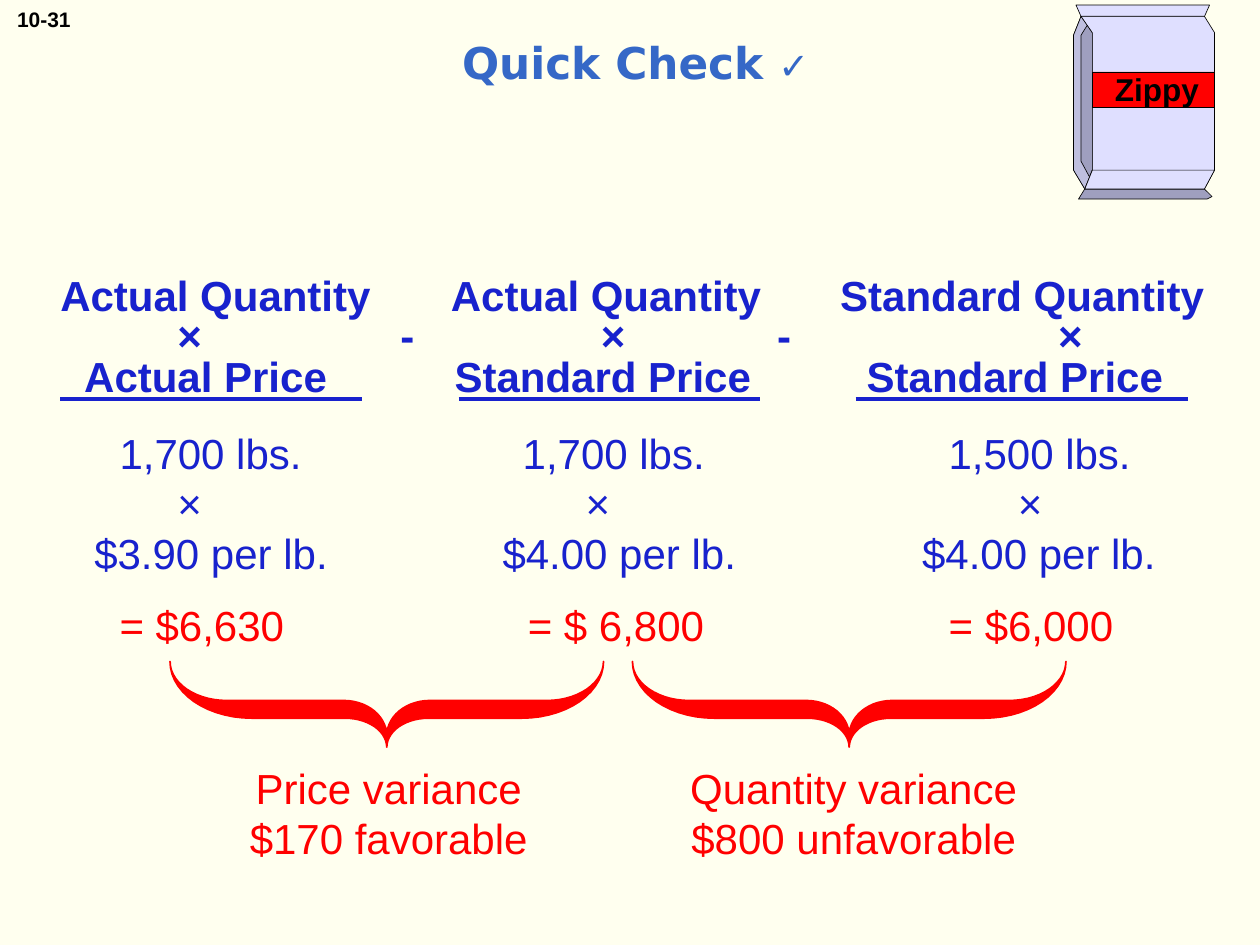
import math

from lxml import etree
from pptx import Presentation, util as u
from pptx.dml.color import RGBColor
from pptx.enum import shapes, text
from pptx.oxml.ns import qn

Inches, Pt = u.Inches, u.Pt
CREAM = RGBColor(0xFF, 0xFF, 0xEF)
BLUE = RGBColor(0x18, 0x22, 0xCD)
TITLE_BLUE = RGBColor(0x35, 0x68, 0xC7)
RED = RGBColor(0xFF, 0x00, 0x00)
BLACK = RGBColor(0x00, 0x00, 0x00)
BAG_LIGHT = RGBColor(0xDF, 0xDF, 0xFF)
BAG_MID = RGBColor(0xBF, 0xBF, 0xDF)
BAG_DARK = RGBColor(0x9F, 0x9F, 0xBF)
LEFT, CENTER, RIGHT = text.PP_ALIGN.LEFT, text.PP_ALIGN.CENTER, text.PP_ALIGN.RIGHT


def text_box(parent, box, wrap=True, anchor=text.MSO_ANCHOR.TOP):
    tf = parent.add_textbox(*map(Inches, box)).text_frame
    tf.word_wrap = wrap
    tf.vertical_anchor = anchor
    return tf


def write(p, content, size=24, color=BLUE, bold=False, font="Arial",
          align=LEFT, before=0, spacing=None):
    """Add a formatted run to a paragraph, and set the paragraph's layout."""
    p.alignment, p.space_before, p.line_spacing = align, Pt(before), spacing
    r = p.add_run()
    r.text = content
    r.font.size, r.font.bold, r.font.name = Pt(size), bold, font
    r.font.color.rgb = color


def write_columns(p, cells, **fmt):
    """Write (position, text) cells at left tab stops, in inches from the text edge."""
    write(p, "".join("\t" + label for _, label in cells), **fmt)
    tabs = etree.SubElement(p._p.get_or_add_pPr(), qn("a:tabLst"))
    for x, _ in cells:
        etree.SubElement(tabs, qn("a:tab"), pos=str(Inches(x)), algn="l")


def paint(sp, fill, line, width):
    sp.shadow.inherit = False
    sp.fill.solid()
    sp.fill.fore_color.rgb = fill
    sp.line.color.rgb = line
    sp.line.width = Pt(width)


def polygon(parent, x, y, points, fill, line=BLACK, width=0.38):
    pts = [(Inches(x + dx), Inches(y + dy)) for dx, dy in points]
    fb = parent.build_freeform(*pts[0])
    fb.add_line_segments(pts[1:], close=True)
    paint(fb.convert_to_shape(), fill, line, width)


def rule(s, x1, x2, y):
    ln = s.shapes.add_connector(shapes.MSO_CONNECTOR.STRAIGHT,
                                Inches(x1), Inches(y), Inches(x2), Inches(y))
    ln.line.color.rgb = BLUE
    ln.line.width = Pt(2.25)
    etree.SubElement(ln._element.spPr, qn("a:effectLst"))


def brace_edge(end_w, depth, bend_x, half, tip):
    """Left half of one brace edge: a quarter ellipse, a flat part, a quarter ellipse."""
    angles = [math.pi / 2 * i / 14 for i in range(15)]
    arm = [(end_w * (1 - math.cos(a)), depth * math.sin(a)) for a in angles]
    bend = [(bend_x + (half - bend_x) * math.sin(a),
             depth + (tip - depth) * (1 - math.cos(a))) for a in angles]
    return arm + bend


def brace(parent, x, y, half=1.72):
    upper = brace_edge(0.45, 0.31, 1.38, half, 0.59)
    lower = brace_edge(0.65, 0.45, 1.39, half, 0.68)

    def mirror(edge):
        return [(2 * half - dx, dy) for dx, dy in edge]

    outline = upper + mirror(upper)[::-1] + mirror(lower) + lower[::-1]
    polygon(parent, x, y, outline, RED, RED, 1)


def variance(s, brace_x, label_x, y, lines):
    g = s.shapes.add_group_shape().shapes
    brace(g, brace_x, y)
    tf = text_box(g, (label_x, y + 0.75, 4.25, 0.9))
    for i, line in enumerate(lines):
        p = tf.add_paragraph() if i else tf.paragraphs[0]
        write(p, line, color=RED, align=CENTER, spacing=Pt(28.8))


def column_table(s, box, rows, spacing):
    """Rows of (cells, format) in one text box."""
    tf = text_box(s.shapes, box)
    for i, (cells, fmt) in enumerate(rows):
        p = tf.add_paragraph() if i else tf.paragraphs[0]
        write_columns(p, cells, spacing=Pt(spacing), **fmt)


def formula_headings(s, x, y):
    bold = {"bold": True}
    column_table(s, (x, y, 9.58, 1.08), [
        ([(0.17, "Actual Quantity"), (3.27, "Actual Quantity"),
          (6.36, "Standard Quantity")], bold),
        ([(1.1, "×"), (2.87, "-"), (4.46, "×"), (5.86, "-"), (8.09, "×")], bold),
        ([(0.36, "Actual Price"), (3.3, "Standard Price"),
          (6.57, "Standard Price")], bold),
    ], 23.04)
    for x1, x2 in ((0.27, 2.66), (3.43, 5.82), (6.58, 9.22)):
        rule(s, x + x1, x + x2, y + 1)


def calculations(s, x, y):
    column_table(s, (x, y, 9.41, 1.89), [
        ([(0.56, "1,700 lbs."), (3.76, "1,700 lbs."), (7.14, "1,500 lbs.")], {}),
        ([(1.02, "×"), (4.26, "×"), (7.69, "×")], {}),
        ([(0.36, "$3.90 per lb."), (3.6, "$4.00 per lb."),
          (6.93, "$4.00 per lb.")], {}),
        ([(0.56, "= $6,630"), (3.8, "= $ 6,800"), (7.14, "= $6,000")],
         {"color": RED, "before": 12}),
    ], 28.8)


def bag(s, x, y):
    g = s.shapes.add_group_shape().shapes
    polygon(g, x, y, [(0.06, 0.09), (0, 0.24), (0, 1.31), (0.09, 1.46),
                      (0.15, 1.31), (0.15, 0.22)], BAG_DARK)
    polygon(g, x, y, [(0.06, 0.09), (0.11, 0.16), (0.06, 0.24), (0.06, 1.24),
                      (0.13, 1.37), (0.09, 1.46), (0, 1.31), (0, 0.24)], BAG_MID)
    polygon(g, x, y, [(0.06, 0.09), (0.02, 0), (1.08, 0), (1.04, 0.09)], BAG_LIGHT)
    polygon(g, x, y, [(0.09, 1.46), (1.04, 1.46), (1.1, 1.52), (1.06, 1.54),
                      (0.04, 1.54)], BAG_DARK)
    polygon(g, x, y, [(0.09, 1.46), (1.04, 1.46), (1.12, 1.31), (1.12, 0.22),
                      (1.04, 0.09), (0.06, 0.09), (0.15, 0.22), (0.15, 1.31)], BAG_LIGHT)
    band = g.add_shape(shapes.MSO_SHAPE.RECTANGLE, Inches(x + 0.15), Inches(y + 0.53),
                       Inches(0.97), Inches(0.28))
    paint(band, RED, BLACK, 0.38)
    polygon(g, x, y, [(0.15, 1.31), (0.09, 1.46), (1.04, 1.46), (1.12, 1.31)], BAG_LIGHT)
    label = text_box(g, (x + 0.23, y + 0.47, 1.08, 0.4))
    write(label.paragraphs[0], "Zippy", size=18, color=BLACK, bold=True)


def heading(s):
    number = text_box(s.shapes, (0.02, 0, 0.64, 0.3), wrap=False)
    write(number.paragraphs[0], "10-31", size=12, color=BLACK, bold=True, align=RIGHT)
    title = text_box(s.shapes, (0.17, 0.08, 9.75, 0.83), anchor=text.MSO_ANCHOR.MIDDLE)
    for part, size in (("Quick Check ", 25), ("✓", 21)):
        write(title.paragraphs[0], part, size=size, color=TITLE_BLUE, bold=True,
              font="DejaVu Sans", align=CENTER)


def main():
    prs = Presentation()
    prs.slide_width, prs.slide_height = Inches(10), Inches(7.5)
    s = prs.slides.add_slide(prs.slide_layouts[6])
    s.background.fill.solid()
    s.background.fill.fore_color.rgb = CREAM
    heading(s)
    calculations(s, 0.29, 3.34)
    variance(s, 1.35, 0.96, 5.25, ("Price variance", "$170 favorable"))
    variance(s, 5.02, 4.65, 5.25, ("Quantity variance", "$800 unfavorable"))
    formula_headings(s, 0.21, 2.17)
    bag(s, 8.52, 0.04)
    prs.save("out.pptx")


if __name__ == "__main__":
    main()
